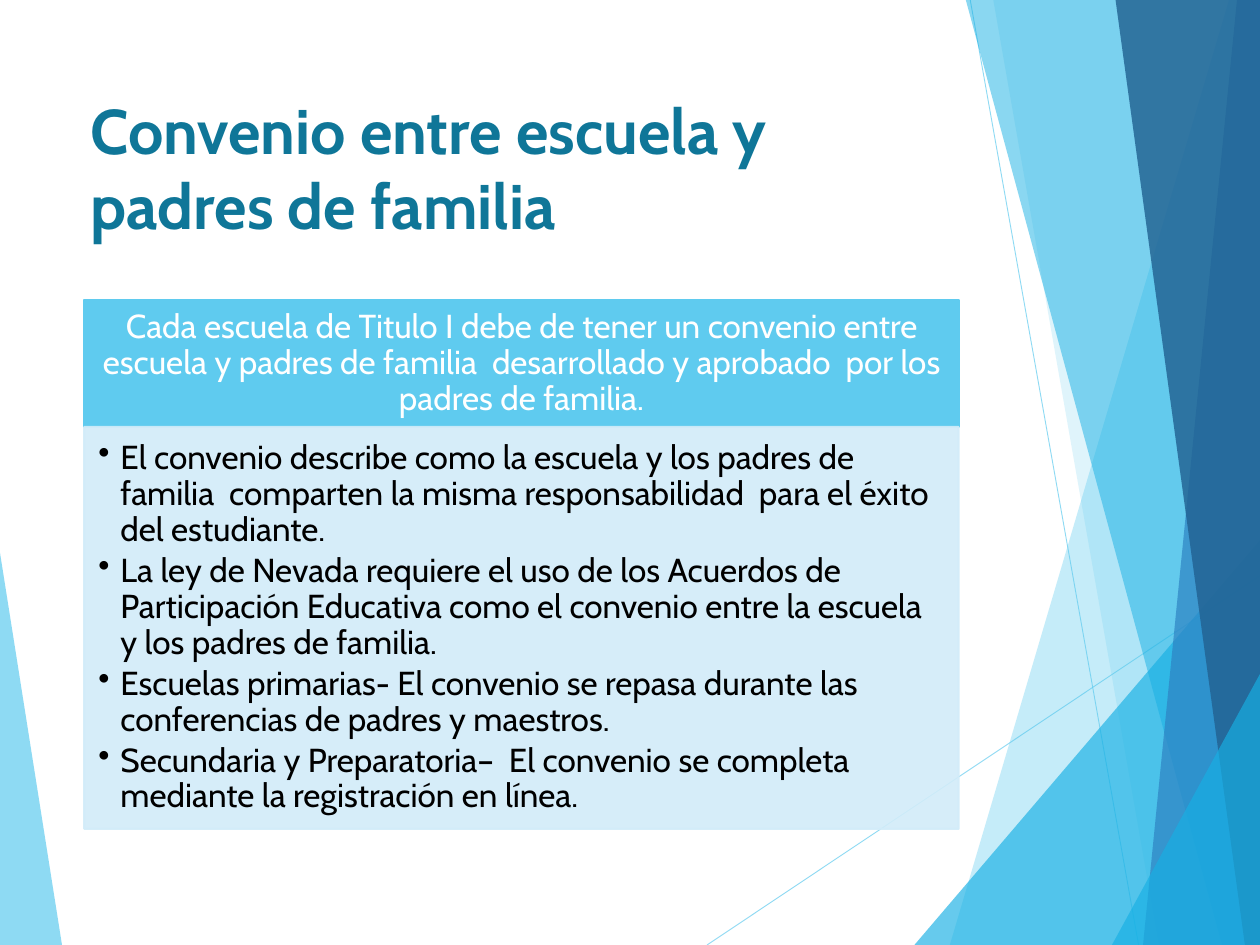
from dataclasses import dataclass

from lxml.etree import SubElement
from pptx import Presentation
from pptx.dml.color import RGBColor
from pptx.enum.shapes import MSO_CONNECTOR, MSO_SHAPE
from pptx.enum.text import MSO_ANCHOR, PP_ALIGN
from pptx.oxml.ns import qn
from pptx.util import Inches, Pt


@dataclass(frozen=True)
class Theme:
    font: str = "Cabin"
    title_size: float = 51.2
    body_size: float = 27
    title: str = "0F7698"
    sky: str = "5FCBEF"
    cyan: str = "17B0E4"
    blue: str = "2E83C3"
    navy: str = "226292"
    pale: str = "D2ECF9"
    white: str = "FFFFFF"
    black: str = "000000"


THEME = Theme()
WIDTH, HEIGHT = 14.22, 10.67

TITLE = "Convenio entre escuela y padres de familia"
HEADING = (
    "Cada escuela de Titulo I debe de tener un convenio entre escuela y padres de "
    "familia  desarrollado y aprobado  por los padres de familia."
)
BULLETS = [
    "El convenio describe como la escuela y los padres de familia  comparten la misma "
    "responsabilidad  para el éxito del estudiante.",
    "La ley de Nevada requiere el uso de los Acuerdos de Participación Educativa como "
    "el convenio entre la escuela y los padres de familia.",
    "Escuelas primarias- El convenio se repasa durante las conferencias de padres y maestros.",
    "Secundaria y Preparatoria–  El convenio se completa mediante la registración en línea.",
]

LEFT_FACET = [(0, 6.24), (0.7, HEIGHT), (0, HEIGHT)]
RAYS = [((7.98, HEIGHT), (WIDTH, 6.5)), ((10.95, 0), (12.85, HEIGHT))]
# Facets on the right edge: x at the bottom, upper point, colour, opacity in percent
RIGHT_FACETS = [
    (10.72, (13.87, 0), THEME.sky, 36),
    (13.08, (11.21, 0), THEME.sky, 20),
    (10.32, (WIDTH, 6.1), THEME.cyan, 66),
    (13.79, (10.9, 0), THEME.cyan, 50),
    (12.9, (13.96, 0), THEME.blue, 70),
    (14.05, (12.59, 0), THEME.navy, 82),
    (12.55, (WIDTH, 7.61), THEME.cyan, 66),
]

COLUMN_LEFT, COLUMN_WIDTH = 0.95, 9.87
TITLE_TOP, TITLE_HEIGHT = 0.95, 2.05
HEADING_TOP, HEADING_HEIGHT = 3.39, 1.43
BODY_HEIGHT = 4.54
BULLET_INDENT = 0.25


def paint(fill, color, opacity=100):
    fill.solid()
    fill.fore_color.rgb = RGBColor.from_string(color)
    if opacity < 100:
        color_element = fill._xPr.find(".//" + qn("a:srgbClr"))
        SubElement(color_element, qn("a:alpha"), val=str(opacity * 1000))


def add_facet(slide, points, color, opacity):
    corners = [(Inches(x), Inches(y)) for x, y in points]
    builder = slide.shapes.build_freeform(*corners[0])
    builder.add_line_segments(corners[1:], close=True)
    shape = builder.convert_to_shape()
    shape.shadow.inherit = False
    paint(shape.fill, color, opacity)
    shape.line.fill.background()


def add_ray(slide, start, end):
    ray = slide.shapes.add_connector(
        MSO_CONNECTOR.STRAIGHT, *(Inches(value) for value in start + end)
    )
    ray.line.width = Pt(0.75)
    paint(ray.line.fill, THEME.sky, 70)
    SubElement(ray._element.spPr, qn("a:effectLst"))


def add_panel(slide, top, height, color, opacity=100):
    shape = slide.shapes.add_shape(
        MSO_SHAPE.RECTANGLE,
        Inches(COLUMN_LEFT), Inches(top), Inches(COLUMN_WIDTH), Inches(height),
    )
    shape.shadow.inherit = False
    paint(shape.fill, color, opacity)
    shape.line.width = Pt(1.5)
    paint(shape.line.fill, color, opacity)
    return shape


def write(shape, lines, size, color, insets, anchor=MSO_ANCHOR.TOP,
          align=PP_ALIGN.LEFT, bold=False):
    """Fill a shape with one paragraph per line; insets run left, top, right, bottom."""
    frame = shape.text_frame
    frame.word_wrap = True
    frame.vertical_anchor = anchor
    frame.margin_left, frame.margin_top, frame.margin_right, frame.margin_bottom = map(
        Inches, insets
    )
    frame.text = "\n".join(lines)
    for paragraph in frame.paragraphs:
        paragraph.alignment = align
        font = paragraph.runs[0].font
        font.name, font.size, font.bold = THEME.font, Pt(size), bold
        font.color.rgb = RGBColor.from_string(color)
    return frame.paragraphs


def add_bullet(paragraph):
    properties = paragraph._p.get_or_add_pPr()
    properties.set("marL", str(Inches(BULLET_INDENT)))
    properties.set("indent", str(-Inches(BULLET_INDENT)))
    SubElement(properties, qn("a:buChar"), char="•")


def add_background(slide):
    add_facet(slide, LEFT_FACET, THEME.sky, 70)
    for start, end in RAYS:
        add_ray(slide, start, end)
    for bottom_x, upper, color, opacity in RIGHT_FACETS:
        points = [(bottom_x, HEIGHT), upper, (WIDTH, upper[1]), (WIDTH, HEIGHT)]
        add_facet(slide, list(dict.fromkeys(points)), color, opacity)


def add_content(slide):
    title = slide.shapes.add_textbox(
        Inches(COLUMN_LEFT), Inches(TITLE_TOP), Inches(COLUMN_WIDTH), Inches(TITLE_HEIGHT)
    )
    write(title, [TITLE], THEME.title_size, THEME.title, (0.07, 0.08, 0.07, 0.08), bold=True)

    heading = add_panel(slide, HEADING_TOP, HEADING_HEIGHT, THEME.sky)
    (paragraph,) = write(
        heading, [HEADING], THEME.body_size, THEME.white, (0.21, 0.12, 0.21, 0.12),
        MSO_ANCHOR.MIDDLE, PP_ALIGN.CENTER,
    )
    paragraph.line_spacing = 0.9

    body = add_panel(slide, HEADING_TOP + HEADING_HEIGHT, BODY_HEIGHT, THEME.pale, 90)
    for paragraph in write(
        body, BULLETS, THEME.body_size, THEME.black, (0.16, 0.16, 0.21, 0.24)
    ):
        paragraph.line_spacing = 0.9
        paragraph.space_after = Pt(0.15 * THEME.body_size)
        add_bullet(paragraph)


def main():
    presentation = Presentation()
    presentation.slide_width, presentation.slide_height = Inches(WIDTH), Inches(HEIGHT)
    slide = presentation.slides.add_slide(presentation.slide_layouts[6])
    paint(slide.background.fill, THEME.white)
    add_background(slide)
    add_content(slide)
    presentation.save("out.pptx")


if __name__ == "__main__":
    main()
